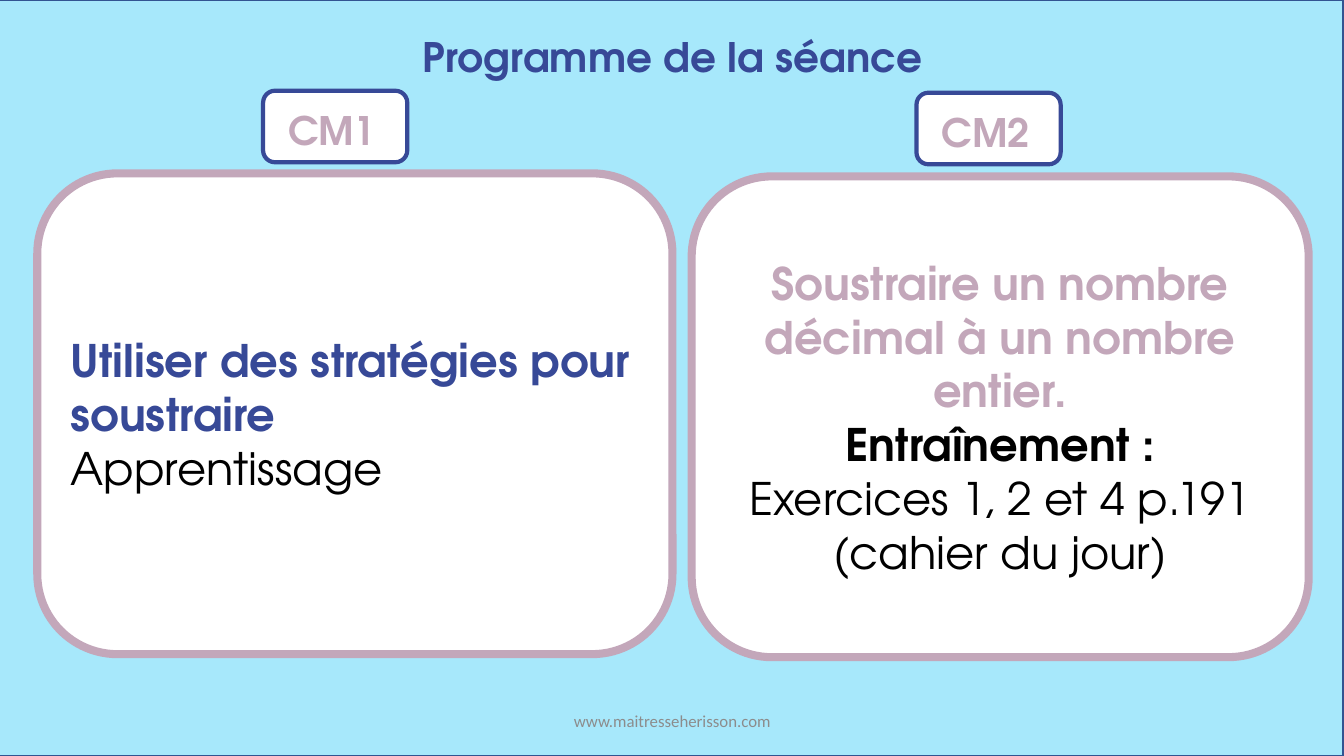
from dataclasses import dataclass

from pptx import Presentation
from pptx.dml.color import RGBColor
from pptx.enum.shapes import MSO_SHAPE
from pptx.enum.text import MSO_ANCHOR, MSO_AUTO_SIZE, PP_ALIGN
from pptx.util import Emu, Pt

EMU_PER_PX = 9144  # 100 px to the inch
SLIDE_WIDTH, SLIDE_HEIGHT = 1333, 750


@dataclass(frozen=True)
class Theme:
    sky: RGBColor = RGBColor.from_string("A7E8FB")
    frame: RGBColor = RGBColor.from_string("325491")
    navy: RGBColor = RGBColor.from_string("374997")
    mauve: RGBColor = RGBColor.from_string("C3A7BA")
    grey: RGBColor = RGBColor.from_string("8C8C8C")
    black: RGBColor = RGBColor.from_string("000000")
    white: RGBColor = RGBColor.from_string("FFFFFF")
    main_font: str = "TeX Gyre Adventor"
    footer_font: str = "Calibri"
    title_size: int = 29
    label_size: int = 28
    body_size: int = 32
    footer_size: int = 12


THEME = Theme()


def px(length):
    return Emu(length * EMU_PER_PX)


def box(left, top, width, height):
    return px(left), px(top), px(width), px(height)


def write(text_frame, lines, size, align=PP_ALIGN.LEFT,
          anchor=MSO_ANCHOR.TOP, font=THEME.main_font):
    """Fill a text frame with (text, colour, bold) lines, one paragraph each."""
    text_frame.word_wrap = True
    text_frame.auto_size = MSO_AUTO_SIZE.NONE
    text_frame.vertical_anchor = anchor
    text_frame.text = "\n".join(text for text, _, _ in lines)
    for paragraph, (_, colour, bold) in zip(text_frame.paragraphs, lines):
        paragraph.alignment = align
        for run in paragraph.runs:
            run.font.name = font
            run.font.size = Pt(size)
            run.font.bold = bold
            run.font.color.rgb = colour


def add_panel(slide, preset, bounds, fill, line, line_width):
    shape = slide.shapes.add_shape(preset, *box(*bounds))
    shape.shadow.inherit = False
    shape.fill.solid()
    shape.fill.fore_color.rgb = fill
    shape.line.color.rgb = line
    shape.line.width = Pt(line_width)
    return shape


def add_text(slide, bounds, lines, size, **style):
    text_box = slide.shapes.add_textbox(*box(*bounds))
    write(text_box.text_frame, lines, size, **style)


def add_level_label(slide, left, top, level):
    add_panel(slide, MSO_SHAPE.ROUNDED_RECTANGLE, (left, top, 143, 71),
              THEME.white, THEME.navy, 3)
    add_text(slide, (left + 15, top + 11, 110, 57),
             [(level, THEME.mauve, True)], THEME.label_size)


def add_programme_card(slide, left, top, width, lines, align):
    card = add_panel(slide, MSO_SHAPE.ROUNDED_RECTANGLE, (left, top, width, 477),
                     THEME.white, THEME.mauve, 5.75)
    write(card.text_frame, lines, THEME.body_size, align, MSO_ANCHOR.MIDDLE)


def set_title(slide, text):
    """Place the title and bring it in front of the coloured backdrop."""
    title = slide.shapes.title
    title.left, title.top, title.width, title.height = box(1, 27, SLIDE_WIDTH, 59)
    write(title.text_frame, [(text, THEME.navy, True)], THEME.title_size, PP_ALIGN.CENTER)
    slide.shapes.element.append(title.element)


def main():
    presentation = Presentation()
    presentation.slide_width = px(SLIDE_WIDTH)
    presentation.slide_height = px(SLIDE_HEIGHT)
    slide = presentation.slides.add_slide(presentation.slide_layouts[5])

    add_panel(slide, MSO_SHAPE.RECTANGLE, (-1, 0, SLIDE_WIDTH, SLIDE_HEIGHT),
              THEME.sky, THEME.frame, 1)
    set_title(slide, "Programme de la séance")

    add_level_label(slide, 261, 90, "CM1")
    add_programme_card(slide, 37, 172, 630, [
        ("Utiliser des stratégies pour soustraire", THEME.navy, True),
        ("Apprentissage", THEME.black, False),
    ], PP_ALIGN.LEFT)

    add_level_label(slide, 909, 92, "CM2")
    add_programme_card(slide, 686, 175, 612, [
        ("Soustraire un nombre décimal à un nombre entier.", THEME.mauve, True),
        ("Entraînement :", THEME.black, True),
        ("Exercices 1, 2 et 4 p.191", THEME.black, False),
        ("(cahier du jour)", THEME.black, False),
    ], PP_ALIGN.CENTER)

    add_text(slide, (442, 695, 450, 40),
             [("www.maitresseherisson.com", THEME.grey, False)], THEME.footer_size,
             align=PP_ALIGN.CENTER, anchor=MSO_ANCHOR.MIDDLE, font=THEME.footer_font)

    presentation.save("out.pptx")


if __name__ == "__main__":
    main()
